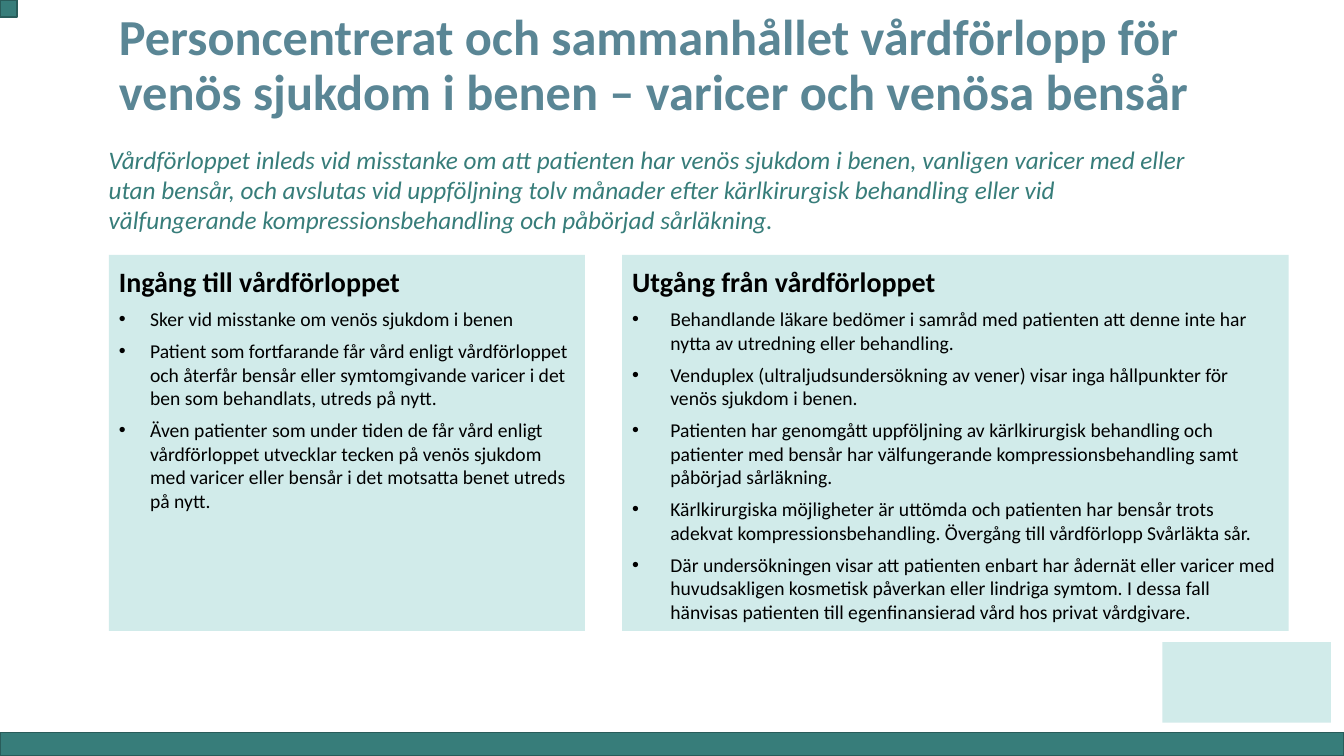
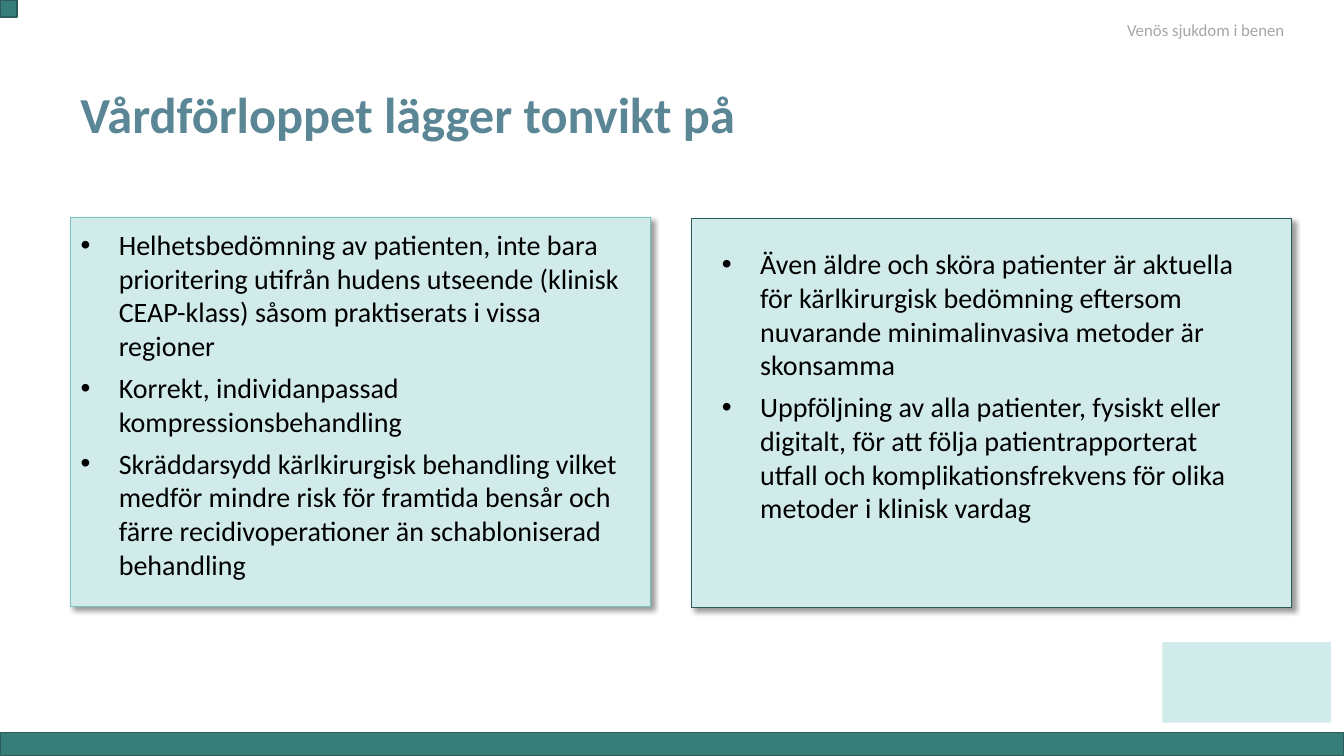
import pptx
import pptx.util
import pptx.dml.color
import pptx.enum.shapes
import pptx.enum.text
import pptx.oxml.ns
from lxml import etree

Inches, Pt = pptx.util.Inches, pptx.util.Pt
ANCHOR = pptx.enum.text.MSO_ANCHOR

# Shared look
FONT = "Calibri"
TEAL, DARK_TEAL, MID_TEAL, PALE_TEAL = "377D7A", "295C5A", "76C2BF", "D1EBEA"
TITLE_BLUE, BLACK, GREY = "5A8695", "000000", "A6A6A6"
WIDTH, HEIGHT = 13.33, 7.5
BAND_HEIGHT = 0.23
INSETS = (0.1, 0.05, 0.1, 0.05)


def rgb(value):
    return pptx.dml.color.RGBColor.from_string(value)


def sub(parent, tag, **attrs):
    return etree.SubElement(parent, pptx.oxml.ns.qn(tag), attrs)


def set_frame(tf, insets=INSETS, anchor=ANCHOR.TOP):
    tf.word_wrap = True
    tf.vertical_anchor = anchor
    tf.margin_left, tf.margin_top, tf.margin_right, tf.margin_bottom = map(Inches, insets)


def add_paragraph(tf, text, size, color=BLACK, bold=False, italic=False,
                  spacing=None, indent=None):
    """Fill the empty first paragraph, or append one; an indent makes it a bullet."""
    first = not tf.text
    p = tf.paragraphs[0] if first else tf.add_paragraph()
    p.text = text
    p.alignment = pptx.enum.text.PP_ALIGN.LEFT
    if spacing:
        p.line_spacing = spacing
    if indent:
        if not first:
            p.space_before = Pt(6)
        pPr = p._p.get_or_add_pPr()
        pPr.set("marL", str(Inches(indent)))
        pPr.set("indent", str(-Inches(indent)))
        sub(pPr, "a:buFont", typeface="Arial")
        sub(pPr, "a:buChar", char="•")
    font = p.font
    font.name, font.size, font.bold, font.italic = FONT, Pt(size), bold, italic
    font.color.rgb = rgb(color)


def add_text(slide, box, text, size, anchor=ANCHOR.TOP, **style):
    tf = slide.shapes.add_textbox(*map(Inches, box)).text_frame
    set_frame(tf, anchor=anchor)
    add_paragraph(tf, text, size, **style)


def add_rect(slide, box, fill, line=None):
    sp = slide.shapes.add_shape(pptx.enum.shapes.MSO_SHAPE.RECTANGLE, *map(Inches, box))
    sp.shadow.inherit = False
    sp.fill.solid()
    sp.fill.fore_color.rgb = rgb(fill)
    if line:
        sp.line.color.rgb = rgb(line)
        sp.line.width = Pt(1)
    else:
        sp.line.fill.background()
    return sp


def add_shadow(sp):
    effects = sp._element.spPr.find(pptx.oxml.ns.qn("a:effectLst"))
    shadow = sub(effects, "a:outerShdw", blurRad=str(Pt(4)), dist=str(Pt(3)),
                 dir=str(45 * 60000), algn="tl", rotWithShape="0")
    sub(sub(shadow, "a:srgbClr", val=BLACK), "a:alpha", val="40000")


def add_panel(slide, box, bullets, size, heading=None, indent=0.38,
              line=None, shadow=False, insets=INSETS):
    sp = add_rect(slide, box, PALE_TEAL, line)
    if shadow:
        add_shadow(sp)
    tf = sp.text_frame
    set_frame(tf, insets)
    if heading:
        add_paragraph(tf, heading, 20, bold=True, spacing=1.15)
    for bullet in bullets:
        add_paragraph(tf, bullet, size, indent=indent)


def new_slide(prs, title, title_box):
    slide = prs.slides.add_slide(prs.slide_layouts[6])
    # Bottom band, plain corner block and corner square
    add_rect(slide, (0, HEIGHT - BAND_HEIGHT, WIDTH, BAND_HEIGHT), TEAL, DARK_TEAL)
    add_rect(slide, (11.53, 6.37, 1.67, 0.8), PALE_TEAL)
    add_rect(slide, (0, 0, 0.17, 0.17), TEAL, DARK_TEAL)
    add_text(slide, title_box, title, 36, anchor=ANCHOR.BOTTOM,
             color=TITLE_BLUE, bold=True, spacing=0.9)
    return slide


def add_entry_exit_slide(prs):
    slide = new_slide(prs, "Personcentrerat och sammanhållet vårdförlopp för venös sjukdom "
                      "i benen – varicer och venösa bensår", (1.08, 0.1, 10.95, 1.15))
    add_panel(slide, (1.08, 2.53, 4.72, 3.73), [
        "Sker vid misstanke om venös sjukdom i benen",
        "Patient som fortfarande får vård enligt vårdförloppet och återfår bensår eller "
        "symtomgivande varicer i det ben som behandlats, utreds på nytt.",
        "Även patienter som under tiden de får vård enligt vårdförloppet utvecklar tecken på "
        "venös sjukdom med varicer eller bensår i det motsatta benet utreds på nytt.",
    ], 14, heading="Ingång till vårdförloppet", indent=0.31)
    add_panel(slide, (6.17, 2.53, 6.61, 3.73), [
        "Behandlande läkare bedömer i samråd med patienten att denne inte har nytta av "
        "utredning eller behandling.",
        "Venduplex (ultraljudsundersökning av vener) visar inga hållpunkter för venös "
        "sjukdom i benen.",
        "Patienten har genomgått uppföljning av kärlkirurgisk behandling och patienter med "
        "bensår har välfungerande kompressionsbehandling samt påbörjad sårläkning.",
        "Kärlkirurgiska möjligheter är uttömda och patienten har bensår trots adekvat "
        "kompressionsbehandling. Övergång till vårdförlopp Svårläkta sår.",
        "Där undersökningen visar att patienten enbart har ådernät eller varicer med "
        "huvudsakligen kosmetisk påverkan eller lindriga symtom. I dessa fall hänvisas "
        "patienten till egenfinansierad vård hos privat vårdgivare.",
    ], 14, heading="Utgång från vårdförloppet")
    add_text(slide, (0.98, 1.38, 11.05, 1.01),
             "Vårdförloppet inleds vid misstanke om att patienten har venös sjukdom i benen, "
             "vanligen varicer med eller utan bensår, och avslutas vid uppföljning tolv månader "
             "efter kärlkirurgisk behandling eller vid välfungerande kompressionsbehandling och "
             "påbörjad sårläkning.", 18, color=TEAL, italic=True)


def add_emphasis_slide(prs):
    slide = new_slide(prs, "Vårdförloppet lägger tonvikt på", (0.7, 0.81, 10, 0.67))
    add_panel(slide, (0.7, 2.16, 5.75, 3.86), [
        "Helhetsbedömning av patienten, inte bara prioritering utifrån hudens utseende "
        "(klinisk CEAP-klass) såsom praktiserats i vissa regioner",
        "Korrekt, individanpassad kompressionsbehandling",
        "Skräddarsydd kärlkirurgisk behandling vilket medför mindre risk för framtida bensår "
        "och färre recidivoperationer än schabloniserad behandling",
    ], 20, line=MID_TEAL, shadow=True, insets=(0.1, 0.1, 0.1, 0.05))
    add_panel(slide, (6.86, 2.17, 5.95, 3.86), [
        "Även äldre och sköra patienter är aktuella för kärlkirurgisk bedömning eftersom "
        "nuvarande minimalinvasiva metoder är skonsamma",
        "Uppföljning av alla patienter, fysiskt eller digitalt, för att följa "
        "patientrapporterat utfall och komplikationsfrekvens för olika metoder i klinisk vardag",
    ], 20, line=DARK_TEAL, shadow=True, insets=(0.3, 0.28, 0.41, 0.05))
    add_text(slide, (11.08, 0.15, 1.88, 0.3), "Venös sjukdom i benen", 12, color=GREY)


def main():
    prs = pptx.Presentation()
    prs.slide_width, prs.slide_height = Inches(WIDTH), Inches(HEIGHT)
    add_entry_exit_slide(prs)
    add_emphasis_slide(prs)
    prs.save("out.pptx")


if __name__ == "__main__":
    main()
